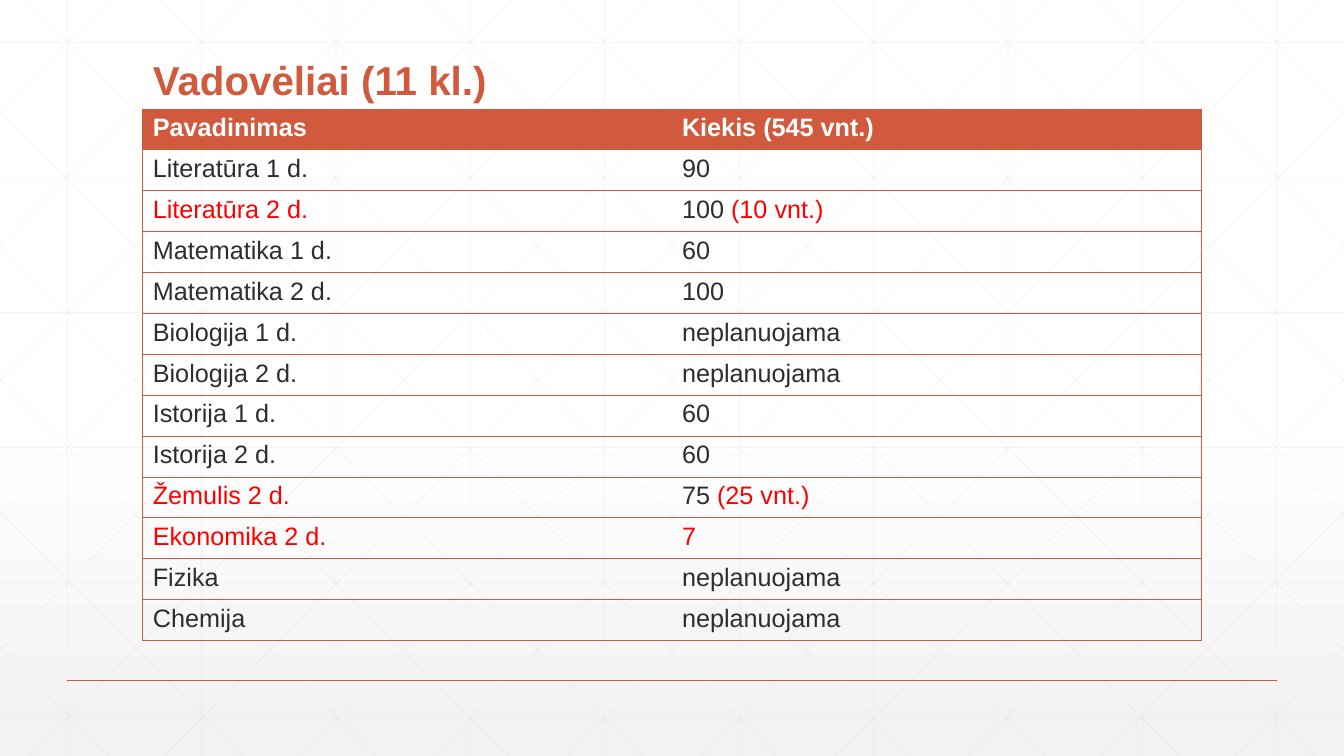
from copy import deepcopy

from lxml.etree import SubElement
from pptx import Presentation
from pptx.dml.color import RGBColor
from pptx.enum.shapes import MSO_CONNECTOR as CONN
from pptx.enum.text import MSO_ANCHOR as ANCHOR, MSO_AUTO_SIZE as AUTO, PP_ALIGN as ALIGN
from pptx.oxml import parse_xml
from pptx.oxml.ns import nsdecls, qn
from pptx.util import Pt

ACCENT = RGBColor(0xD1, 0x5A, 0x3E)
INK = RGBColor(0x2D, 0x2E, 0x2D)
RED = RGBColor(0xFF, 0x00, 0x00)
WHITE = RGBColor(0xFF, 0xFF, 0xFF)
PALE = RGBColor(0xF2, 0xF2, 0xF2)
GRID = RGBColor(0xD9, 0xD9, 0xD9)

WIDTH, HEIGHT = 960, 540
STEP = 96
NO_STYLE = "{2D5ABB26-0587-4C30-8999-92F81FD0307C}"

HEADER = ("Pavadinimas", "Kiekis (545 vnt.)")
# Title, quantity, quantity in red (which also turns the title red)
BOOKS = [
    ("Literatūra 1 d.", "90", ""),
    ("Literatūra 2 d.", "100 ", "(10 vnt.)"),
    ("Matematika 1 d.", "60", ""),
    ("Matematika 2 d.", "100", ""),
    ("Biologija 1 d.", "neplanuojama", ""),
    ("Biologija 2 d.", "neplanuojama", ""),
    ("Istorija 1 d.", "60", ""),
    ("Istorija 2 d.", "60", ""),
    ("Žemulis 2 d.", "75 ", "(25 vnt.)"),
    ("Ekonomika 2 d.", "", "7"),
    ("Fizika", "neplanuojama", ""),
    ("Chemija", "neplanuojama", ""),
]


class Deck:
    font = "Arial"

    def __init__(self, prs):
        self.s = prs.slides.add_slide(prs.slide_layouts[5])

    def background(self):
        fill = self.s.background.fill
        fill.gradient()
        fill.gradient_angle = 270
        first, last = fill.gradient_stops
        first.color.rgb, first.position = WHITE, 0
        last.color.rgb, last.position = PALE, 1
        # White holds until just past the middle
        gs = self.s.background.element.find(".//" + qn("a:gs"))
        middle = deepcopy(gs)
        middle.set("pos", "53000")
        gs.addnext(middle)

    def line(self, x1, y1, x2, y2, color, width, alpha=None):
        c = self.s.shapes.add_connector(CONN.STRAIGHT, Pt(x1), Pt(y1), Pt(x2), Pt(y2))
        c.line.color.rgb = color
        c.line.width = Pt(width)
        sp_pr = c.element.spPr
        if alpha:
            clr = sp_pr.find(".//" + qn("a:srgbClr"))
            SubElement(clr, qn("a:alpha")).set("val", str(alpha * 1000))
        SubElement(sp_pr, qn("a:effectLst"))

    def grid_line(self, x1, y1, x2, y2):
        self.line(x1, y1, x2, y2, GRID, 0.5, 25)

    def diagonal(self, x1, y1, x2, y2):
        """Draw a diagonal and its mirror about the middle of the slide."""
        self.grid_line(x1, y1, x2, y2)
        self.grid_line(WIDTH - x1, y1, WIDTH - x2, y2)

    def style(self, r, size, color, bold=False):
        r.font.name = self.font
        r.font.size = Pt(size)
        r.font.bold = bold
        r.font.color.rgb = color

    def title(self, text, x, y, w, h):
        sp = self.s.shapes.title
        sp.left, sp.top, sp.width, sp.height = Pt(x), Pt(y), Pt(w), Pt(h)
        sp.element.getparent().append(sp.element)  # in front of the grid
        tf = sp.text_frame
        tf.text = text
        tf.auto_size = AUTO.NONE
        tf.vertical_anchor = ANCHOR.BOTTOM
        p = tf.paragraphs[0]
        p.alignment = ALIGN.LEFT
        p.line_spacing = 0.9
        self.style(p.runs[0], 28.8, ACCENT, True)

    def cell(self, cell, parts, sides, bold=False, fill=None):
        p = cell.text_frame.paragraphs[0]
        for text, color in parts:
            if text:
                r = p.add_run()
                r.text = text
                self.style(r, 18, color, bold)
        if fill is None:
            cell.fill.background()
        else:
            cell.fill.solid()
            cell.fill.fore_color.rgb = fill
        tc_pr = cell._tc.get_or_add_tcPr()
        for i, side in enumerate(sides):
            tc_pr.insert(i, parse_xml(
                f'<a:ln{side} {nsdecls("a")} w="6350"><a:solidFill>'
                f'<a:srgbClr val="{ACCENT}"/></a:solidFill></a:ln{side}>'))

    def table(self, header, books, x, y, w, row_h):
        n = len(books) + 1
        tbl = self.s.shapes.add_table(n, 2, Pt(x), Pt(y), Pt(w), Pt(row_h * n)).table
        tbl.horz_banding = False
        tbl._tbl.tblPr.find(qn("a:tableStyleId")).text = NO_STYLE
        for row in tbl.rows:
            row.height = Pt(row_h)
        for col, side in enumerate("LR"):
            self.cell(tbl.cell(0, col), [(header[col], WHITE)], side + "TB", True, ACCENT)
        for i, (name, count, marked) in enumerate(books, 1):
            self.cell(tbl.cell(i, 0), [(name, RED if marked else INK)], "LTB")
            self.cell(tbl.cell(i, 1), [(count, INK), (marked, RED)], "RTB")


def main():
    prs = Presentation()
    prs.slide_width, prs.slide_height = Pt(WIDTH), Pt(HEIGHT)
    deck = Deck(prs)
    deck.background()

    # Straight grid lines
    for i in range(10):
        x = 48 + STEP * i
        deck.grid_line(x, 0, x, HEIGHT)
    for i in range(6):
        y = 30.24 + 96.48 * i
        deck.grid_line(0, y, WIDTH, y)

    # Diagonals from the top edge, cut off at the side
    run = 536.6
    for i in range(10):
        x = 18 + STEP * i
        end = min(x + run, WIDTH)
        deck.diagonal(x, 0, end, (end - x) * HEIGHT / run)
    # Diagonals from the side to the bottom edge
    for i in range(5):
        deck.diagonal(458.6 - 95.2 * i, HEIGHT, 0, 79.9 + 95.4 * i)

    # Footer rule
    deck.line(48, 486, 912, 486, ACCENT, 1)

    # Title and textbook table
    deck.title("Vadovėliai (11 kl.)", 102, 39.6, 756, 38.2)
    deck.table(HEADER, BOOKS, 102, 77.8, 756, 29.2)

    prs.save("out.pptx")


if __name__ == "__main__":
    main()
